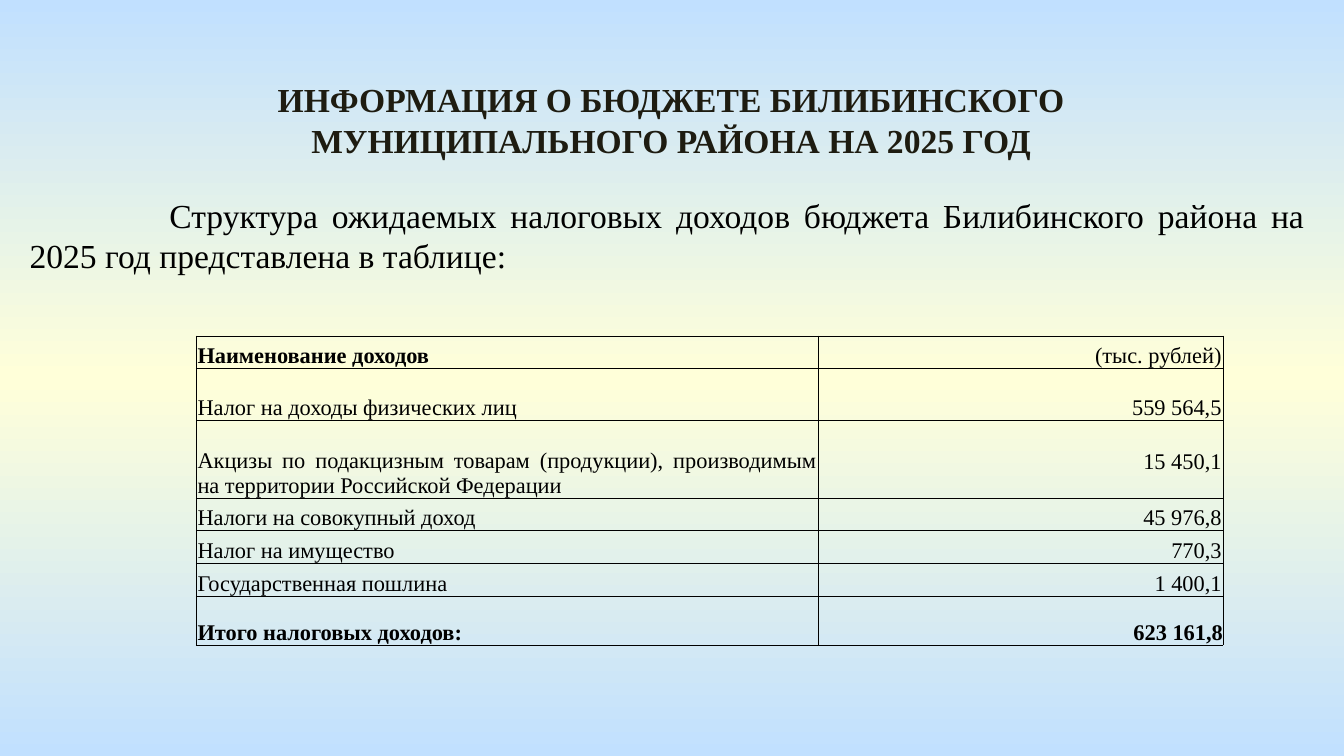
from copy import deepcopy

from pptx import Presentation
from pptx.dml.color import RGBColor
from pptx.enum.text import MSO_ANCHOR, MSO_AUTO_SIZE, PP_ALIGN
from pptx.oxml import parse_xml
from pptx.oxml.ns import nsdecls, qn
from pptx.util import Inches, Pt

FONT = "Times New Roman"
BLACK = "000000"
COLUMN_WIDTHS = (4.63, 3.01)
AMOUNT_LIFT = 0.18
INCOME_ROWS = (
    ("Наименование доходов", "(тыс. рублей)", 0.24),
    ("Налог на доходы физических лиц", "559 564,5", 0.39),
    ("Акцизы по подакцизным товарам (продукции), производимым "
     "на территории Российской Федерации", "15 450,1", 0.58),
    ("Налоги на совокупный доход", "45 976,8", 0.24),
    ("Налог на имущество", "770,3", 0.24),
    ("Государственная пошлина", "1 400,1", 0.25),
    ("Итого налоговых доходов:", "623 161,8", 0.36),
)
EXCISE_ROW = 2
TOTAL_ROW = len(INCOME_ROWS) - 1


def color(value):
    return RGBColor.from_string(value)


def add_run(paragraph, text, size, bold=False, text_color=BLACK):
    run = paragraph.add_run()
    run.text = text
    run.font.name = FONT
    run.font.size = Pt(size)
    run.font.bold = bold
    run.font.color.rgb = color(text_color)


def paint_background(slide):
    fill = slide.background.fill
    fill.gradient()
    fill.gradient_angle = 270
    stop_list = slide.element.find(".//" + qn("a:gsLst"))
    stop_list.insert(1, deepcopy(stop_list[0]))
    stops = ((0, "C1E0FF"), (0.5, "FFFFD9"), (1, "C1E0FF"))
    for stop, (position, value) in zip(fill.gradient_stops, stops):
        stop.position = position
        stop.color.rgb = color(value)


def place_text(shape, left, top, width, height, alignment):
    shape.left, shape.top = Inches(left), Inches(top)
    shape.width, shape.height = Inches(width), Inches(height)
    frame = shape.text_frame
    frame.word_wrap = True
    frame.auto_size = MSO_AUTO_SIZE.SHAPE_TO_FIT_TEXT
    frame.vertical_anchor = MSO_ANCHOR.TOP
    paragraph = frame.paragraphs[0]
    paragraph.alignment = alignment
    paragraph.space_before = Pt(0)
    return paragraph


def fill_title(shape, left, top, width, height):
    paragraph = place_text(shape, left, top, width, height, PP_ALIGN.CENTER)
    add_run(paragraph, "ИНФОРМАЦИЯ О БЮДЖЕТЕ БИЛИБИНСКОГО "
            "МУНИЦИПАЛЬНОГО РАЙОНА НА 2025 ГОД", 18, True, "1E1C11")


def fill_introduction(shape, left, top, width, height):
    paragraph = place_text(shape, left, top, width, height, PP_ALIGN.JUSTIFY)
    properties = paragraph._p.get_or_add_pPr()
    properties.set("marL", "0")
    properties.set("indent", str(Inches(1.04)))
    properties.append(parse_xml(f"<a:buNone {nsdecls('a')}/>"))
    add_run(paragraph, "Структура ожидаемых налоговых доходов бюджета "
            "Билибинского района на 2025 год представлена в таблице:", 18)


def draw_borders(cell):
    properties = cell._tc.get_or_add_tcPr()
    for index, side in enumerate(("lnL", "lnR", "lnT", "lnB")):
        properties.insert(index, parse_xml(
            f'<a:{side} {nsdecls("a")} w="{Pt(0.5)}"><a:solidFill>'
            f'<a:srgbClr val="{BLACK}"/></a:solidFill></a:{side}>'))


def fill_cell(cell, text, alignment, bold, margin=0.01, bottom=0):
    cell.fill.background()
    cell.vertical_anchor = MSO_ANCHOR.BOTTOM
    cell.margin_left = cell.margin_right = cell.margin_top = Inches(margin)
    cell.margin_bottom = Inches(bottom)
    draw_borders(cell)
    paragraph = cell.text_frame.paragraphs[0]
    paragraph.alignment = alignment
    add_run(paragraph, text, 12, bold)


def add_income_table(slide, left, top, width, height):
    table = slide.shapes.add_table(
        len(INCOME_ROWS), len(COLUMN_WIDTHS),
        Inches(left), Inches(top), Inches(width), Inches(height)).table
    table.first_row = table.horz_banding = False
    for column, column_width in zip(table.columns, COLUMN_WIDTHS):
        column.width = Inches(column_width)
    for index, (name, amount, row_height) in enumerate(INCOME_ROWS):
        table.rows[index].height = Inches(row_height)
        total = index == TOTAL_ROW
        fill_cell(table.cell(index, 0), name, PP_ALIGN.JUSTIFY,
                  total or index == 0)
        fill_cell(table.cell(index, 1), amount, PP_ALIGN.RIGHT, total,
                  margin=0 if total else 0.01,
                  bottom=AMOUNT_LIFT if index == EXCISE_ROW else 0)


def main():
    presentation = Presentation()
    presentation.slide_width = Inches(10)
    presentation.slide_height = Inches(10) * 9 // 16
    slide = presentation.slides.add_slide(presentation.slide_layouts[1])
    paint_background(slide)
    fill_title(slide.shapes.title, 1.13, 0.54, 7.73, 0.71)
    fill_introduction(slide.placeholders[1], 0.12, 1.4, 9.69, 0.71)
    add_income_table(slide, 1.46, 2.5, sum(COLUMN_WIDTHS), 2.3)
    presentation.save("out.pptx")


if __name__ == "__main__":
    main()
